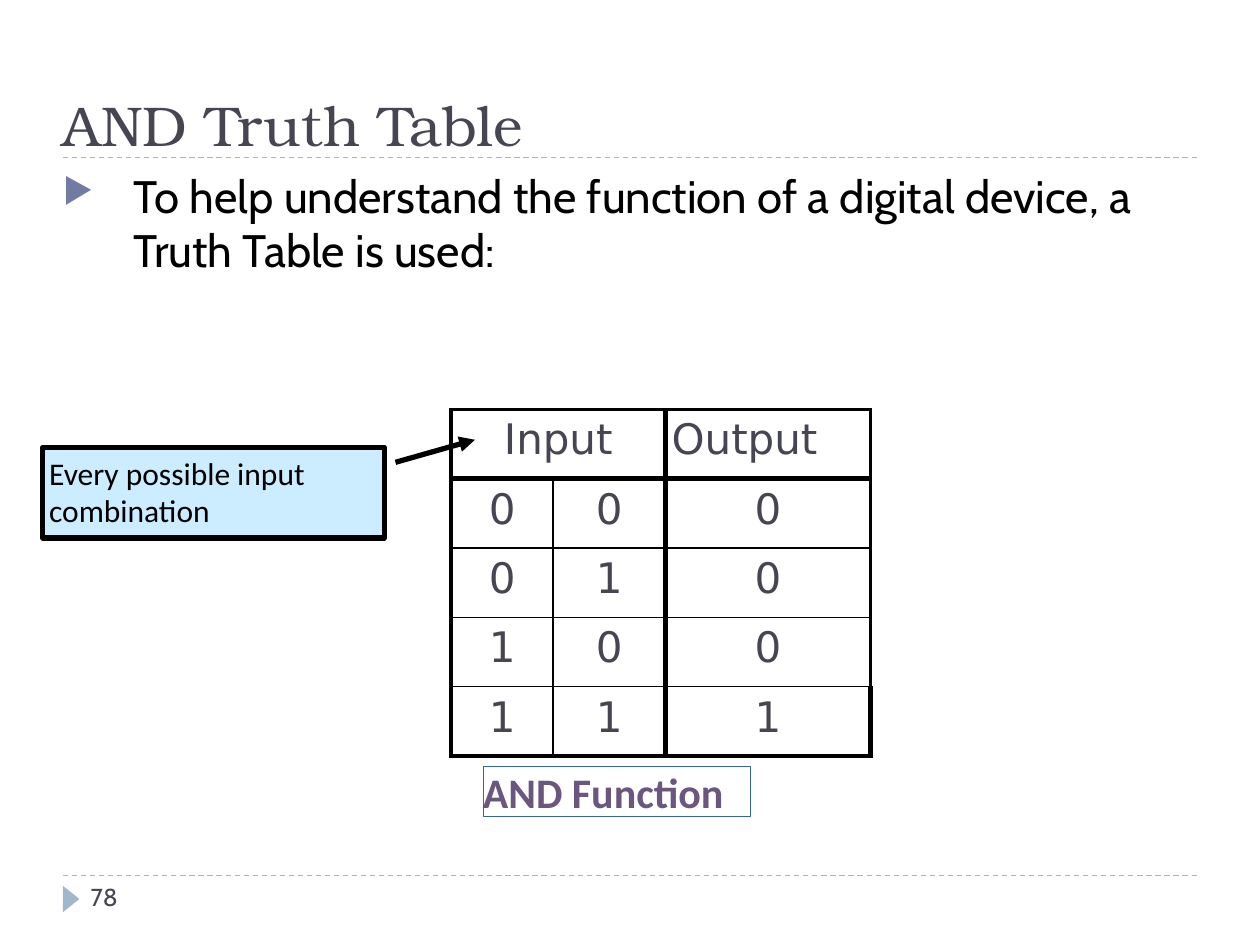
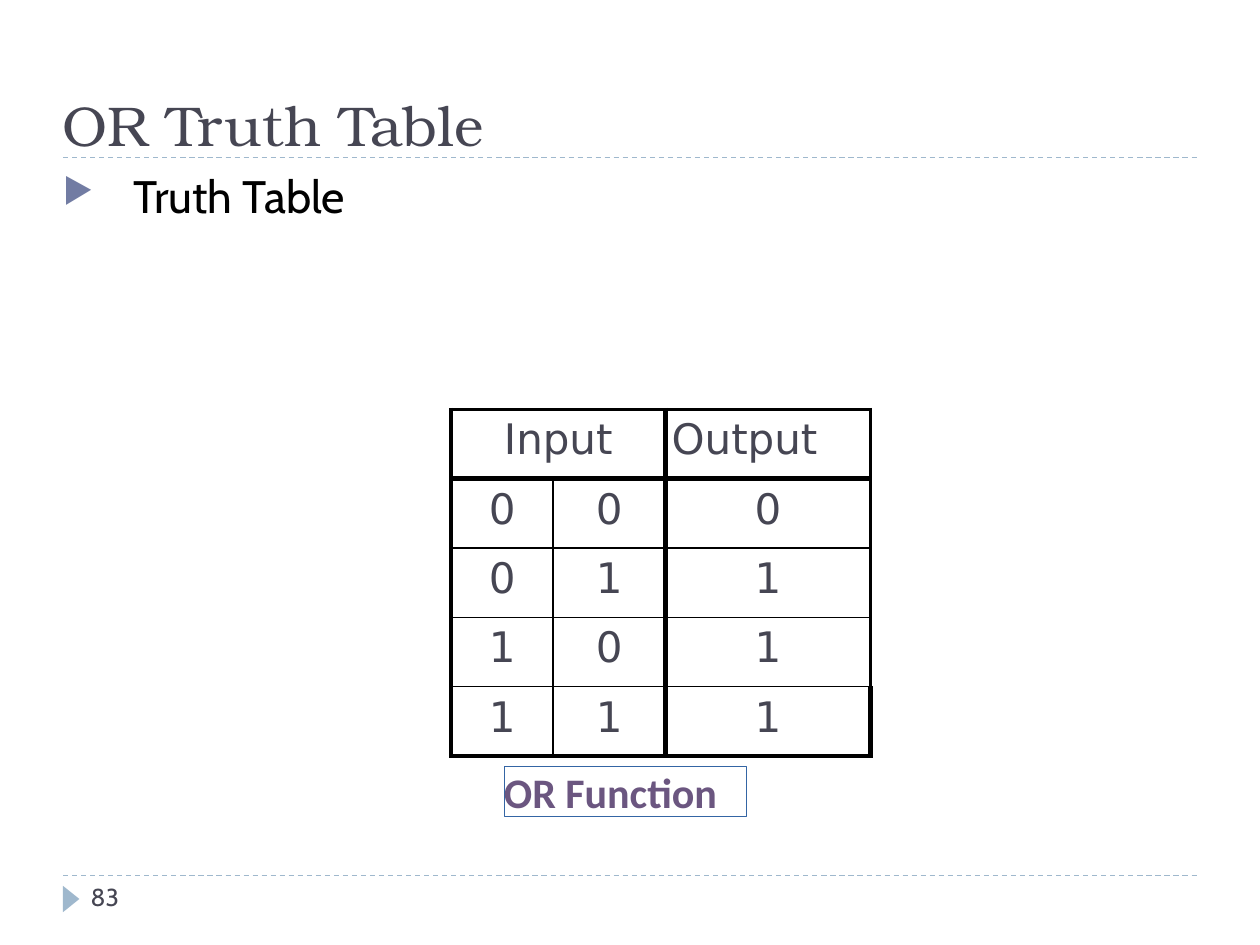
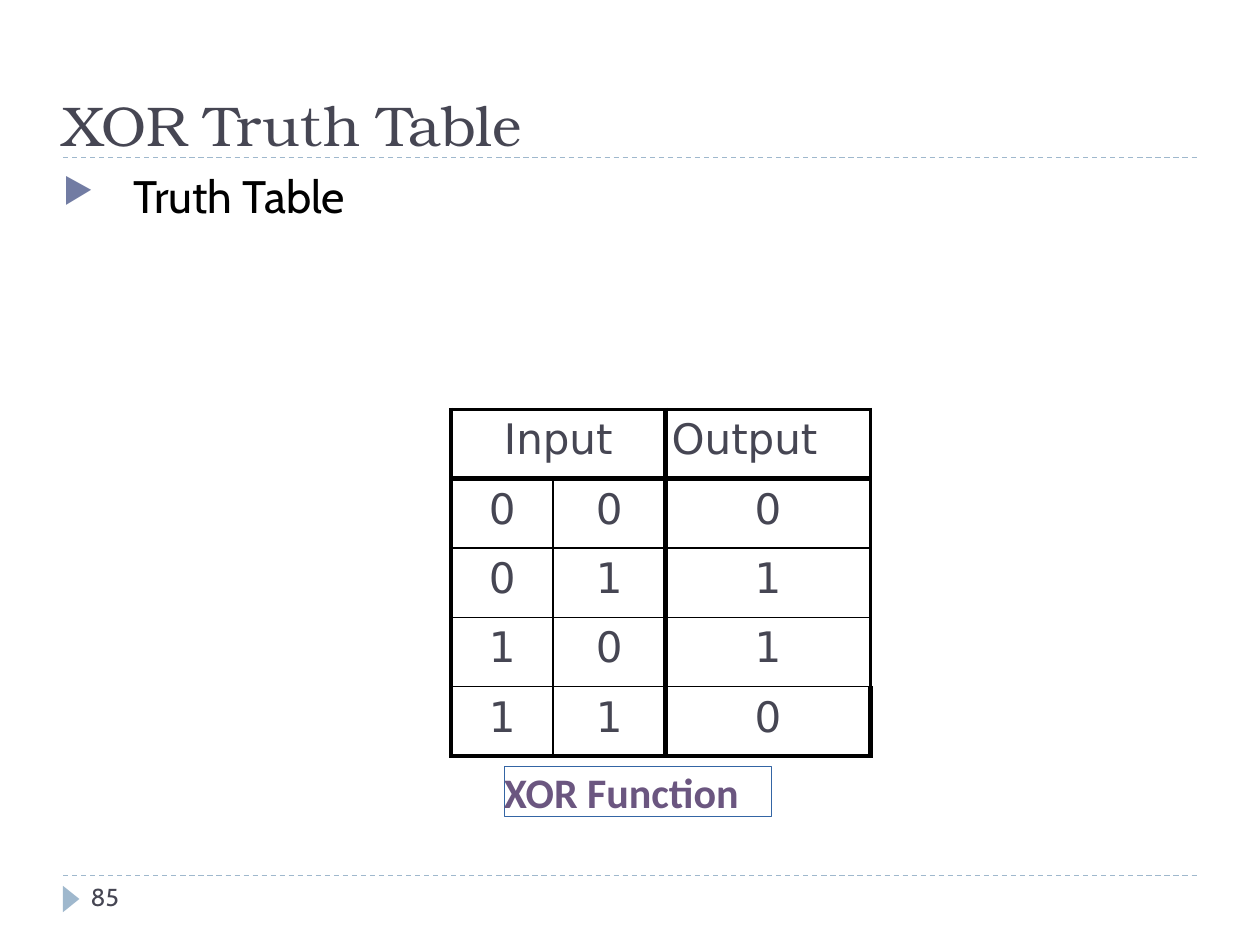
"""Build three slides with the truth tables of the AND, OR and XOR gates."""
from lxml.etree import SubElement
from pptx import Presentation
from pptx.dml.color import RGBColor
from pptx.enum.dml import MSO_LINE
from pptx.enum.shapes import MSO_CONNECTOR, MSO_SHAPE
from pptx.enum.text import MSO_ANCHOR, PP_ALIGN
from pptx.oxml import parse_xml
from pptx.oxml.ns import nsdecls, qn
from pptx.util import Pt

HUES = {"ink": "464653", "black": "000000", "rule": "9FB8CD", "bullet": "727CA3",
        "name": "6B5680", "frame": "3465A4", "note": "CCECFF", "white": "FFFFFF"}
RGB = {key: RGBColor.from_string(hue) for key, hue in HUES.items()}
PAD = 3.6
COLS = [58.3, 64.1, 117.4]
ROW = 39.6
ACROSS = [2.25, 3, 1, 1, 1, 2.25]
DOWN = [2.25, 1, 3, 2.25]
INPUTS = [(0, 0), (0, 1), (1, 0), (1, 1)]
GATES = [
    ("AND", 78, "To help understand the function of a digital device, a Truth Table is used:",
     (0, 0, 0, 1), 276, 153),
    ("OR", 83, "Truth Table", (0, 1, 1, 1), 288, 138.5),
    ("XOR", 85, "Truth Table", (0, 1, 1, 0), 288, 152.5),
]


def write(slide, box, words, font, size, hue, pad=0):
    shape = slide.shapes.add_textbox(*map(Pt, box))
    frame = shape.text_frame
    frame.word_wrap = True
    frame.margin_left = frame.margin_right = Pt(pad)
    frame.margin_top = frame.margin_bottom = Pt(pad)
    para = frame.paragraphs[0]
    para.text = words
    para.font.name, para.font.size = font, Pt(size)
    para.font.color.rgb = RGB[hue]
    return shape, para


def draw(slide, ends, hue, width):
    line = slide.shapes.add_connector(MSO_CONNECTOR.STRAIGHT, *map(Pt, ends))
    line.line.color.rgb = RGB[hue]
    line.line.width = Pt(width)
    SubElement(line._element.spPr, qn("a:effectLst"))
    return line


deck = Presentation()
deck.slide_width, deck.slide_height = Pt(720), Pt(540)

for gate, page, intro, outputs, left, width in GATES:
    slide = deck.slides.add_slide(deck.slide_layouts[6])

    for y in (500.4, 90):
        draw(slide, (36, y, 684, y), "rule", 0.75).line.dash_style = MSO_LINE.DASH
    mark = slide.shapes.add_shape(MSO_SHAPE.ISOSCELES_TRIANGLE,
                                  Pt(33.1), Pt(509), Pt(15.1), Pt(9.4))
    mark.rotation = 90
    mark.shadow.inherit = False
    mark.fill.solid()
    mark.fill.fore_color.rgb = RGB["rule"]
    mark.line.fill.background()

    title, para = write(slide, (36, 12.2, 648, 77.8), f"{gate} Truth Table",
                        "TeX Gyre Bonum", 32, "ink")
    title.text_frame.vertical_anchor = MSO_ANCHOR.BOTTOM
    write(slide, (48.2, 500.4, 156, 24.5), str(page), "Cabin", 14, "ink", PAD)

    body, para = write(slide, (36, 95.8, 648, 388.8), intro, "Cabin", 26, "black")
    para.space_before = Pt(6)
    props = para._p.get_or_add_pPr()
    props.set("marL", str(Pt(40.5)))
    props.set("indent", str(Pt(-40.5)))
    tint = SubElement(props, qn("a:buClr"))
    SubElement(tint, qn("a:srgbClr"), val=HUES["bullet"])
    SubElement(props, qn("a:buSzPct"), val="76000")
    SubElement(props, qn("a:buChar"), char="▶")
    for tag in ("a:defRPr",):
        for node in props.findall(qn(tag)):
            props.append(node)

    table = slide.shapes.add_table(5, 3, Pt(257.8), Pt(234),
                                   Pt(sum(COLS)), Pt(5 * ROW)).table
    table.first_row = table.horz_banding = False
    for col, size in zip(table.columns, COLS):
        col.width = Pt(size)
    table.cell(0, 0).merge(table.cell(0, 1))
    rows = [("Input", "", "Output")]
    rows += [(*pair, out) for pair, out in zip(INPUTS, outputs)]
    for r, row in enumerate(rows):
        table.rows[r].height = Pt(ROW)
        for c, value in enumerate(row):
            cell = table.cell(r, c)
            cell.fill.background()
            cell.margin_left = cell.margin_right = Pt(PAD)
            cell.margin_top = cell.margin_bottom = Pt(PAD)
            para = cell.text_frame.paragraphs[0]
            para.text = str(value)
            para.alignment = PP_ALIGN.LEFT if value == "Output" else PP_ALIGN.CENTER
            para.space_before = Pt(5)
            para.font.name, para.font.size = "DejaVu Sans", Pt(24)
            para.font.color.rgb = RGB["ink"]
            right = 3 if (r, c) == (4, 2) else DOWN[c + 1]
            edges = {"L": DOWN[c], "R": right, "T": ACROSS[r], "B": ACROSS[r + 1]}
            for spot, (side, size) in enumerate(edges.items()):
                edge = parse_xml(
                    f'<a:ln{side} {nsdecls("a")} w="{Pt(size)}"><a:solidFill>'
                    f'<a:srgbClr val="{HUES["black"]}"/></a:solidFill></a:ln{side}>')
                cell._tc.get_or_add_tcPr().insert(spot, edge)

    name, para = write(slide, (left, 437.8, width, 28.8), f"{gate} Function",
                       "Calibri", 24, "name")
    para.font.bold = True
    name.fill.solid()
    name.fill.fore_color.rgb = RGB["white"]
    name.line.color.rgb = RGB["frame"]
    name.line.width = Pt(0.25)

    if gate == "AND":
        note, para = write(slide, (24.5, 255.6, 195.1, 51.8),
                           "Every possible input combination", "Calibri", 18, "black", PAD)
        note.fill.solid()
        note.fill.fore_color.rgb = RGB["note"]
        note.line.color.rgb = RGB["black"]
        note.line.width = Pt(3)
        arrow = draw(slide, (226, 264.2, 271.4, 251.3), "black", 3)
        SubElement(arrow.line._get_or_add_ln(), qn("a:tailEnd"), type="triangle")

deck.save("out.pptx")
